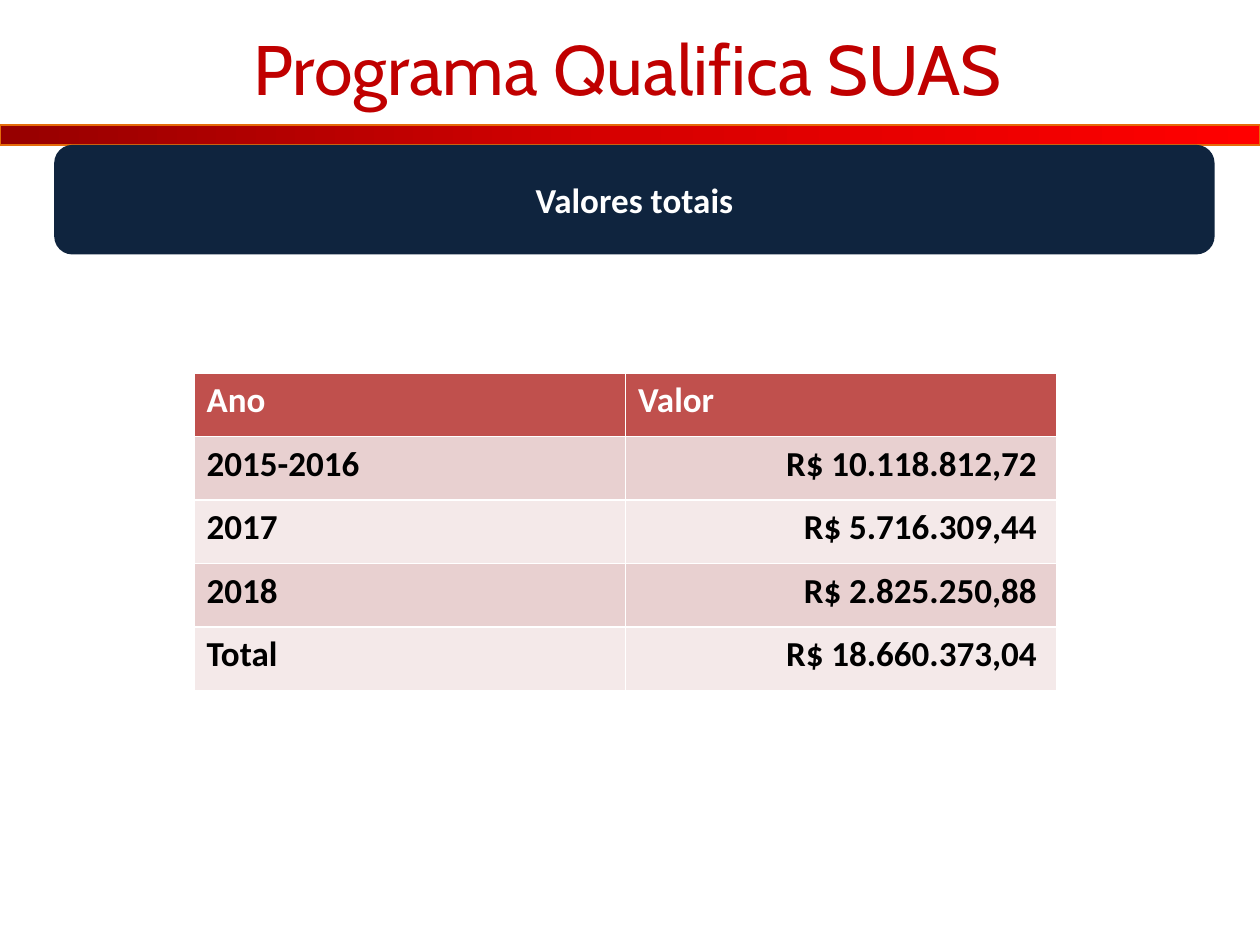
from copy import deepcopy

from pptx import Presentation
from pptx.dml.color import RGBColor
from pptx.enum.shapes import MSO_SHAPE
from pptx.enum.text import MSO_ANCHOR, MSO_AUTO_SIZE, PP_ALIGN
from pptx.oxml.ns import qn
from pptx.util import Inches, Pt

RECTANGLE, ROUNDED = MSO_SHAPE.RECTANGLE, MSO_SHAPE.ROUNDED_RECTANGLE
LEFT, CENTER, RIGHT = PP_ALIGN.LEFT, PP_ALIGN.CENTER, PP_ALIGN.RIGHT
MIDDLE, NO_AUTOFIT = MSO_ANCHOR.MIDDLE, MSO_AUTO_SIZE.NONE
TITLE_ONLY = 5
WIDTH, HEIGHT = 10, 7.5

YEARLY_VALUES = [
    ("Ano", "Valor"),
    ("2015-2016", "R$ 10.118.812,72"),
    ("2017", "R$ 5.716.309,44"),
    ("2018", "R$ 2.825.250,88"),
    ("Total", "R$ 18.660.373,04"),
]


def color(hex_code):
    return RGBColor.from_string(hex_code)


def write(frame, text, font="Calibri", size=20, ink="FFFFFF", bold=True, align=CENTER):
    paragraph = frame.paragraphs[0]
    paragraph.alignment = align
    run = paragraph.add_run()
    run.text = text
    run.font.name, run.font.size, run.font.bold = font, Pt(size), bold
    run.font.color.rgb = color(ink)


class ProgramSlide:
    """Builds a slide in the programme's style, with lengths as shares of its size."""

    red, navy, outline = "C00000", "0F243E", "E46C0A"
    gradient = [("970000", 0), ("D70000", 0.5), ("FF0000", 1)]
    header_fill, row_fills = "C0504D", ("E8D0D0", "F4E9E9")

    def __init__(self, deck):
        self.deck = deck
        self.slide = deck.slides.add_slide(deck.slide_layouts[TITLE_ONLY])

    def area(self, x, y, w, h):
        across, down = self.deck.slide_width, self.deck.slide_height
        return int(x * across), int(y * down), int(w * across), int(h * down)

    def block(self, kind, place):
        shape = self.slide.shapes.add_shape(kind, *self.area(*place))
        shape.shadow.inherit = False
        return shape

    def title(self, text, place):
        heading = self.slide.shapes.title
        heading.left, heading.top, heading.width, heading.height = self.area(*place)
        frame = heading.text_frame
        frame.auto_size, frame.vertical_anchor = NO_AUTOFIT, MIDDLE
        write(frame, text, font="Cabin", size=40, ink=self.red, bold=False)

    def stripe(self, place):
        stripe = self.block(RECTANGLE, place)
        stripe.line.color.rgb, stripe.line.width = color(self.outline), Pt(1)
        stripe.fill.gradient()
        stripe.fill.gradient_angle = 0
        stops = stripe.element.spPr.find(qn("a:gradFill")).find(qn("a:gsLst"))
        stops.append(deepcopy(stops[-1]))
        for stop, (shade, position) in zip(stripe.fill.gradient_stops, self.gradient):
            stop.color.rgb, stop.position = color(shade), position

    def banner(self, text, place):
        banner = self.block(ROUNDED, place)
        banner.fill.solid()
        banner.fill.fore_color.rgb = color(self.navy)
        banner.line.fill.background()
        banner.text_frame.vertical_anchor = MIDDLE
        write(banner.text_frame, text)

    def table(self, rows, place):
        table = self.slide.shapes.add_table(len(rows), len(rows[0]), *self.area(*place)).table
        for r, row in enumerate(rows):
            is_header = r == 0
            for c, text in enumerate(row):
                cell = table.cell(r, c)
                is_amount = c == 1 and not is_header
                cell.fill.solid()
                cell.fill.fore_color.rgb = color(self.header_fill if is_header else self.row_fills[(r - 1) % 2])
                if is_amount:
                    cell.margin_right = Inches(0.16)
                write(cell.text_frame, text, ink="FFFFFF" if is_header else "000000",
                      align=RIGHT if is_amount else LEFT)


def main():
    deck = Presentation()
    deck.slide_width, deck.slide_height = Inches(WIDTH), Inches(HEIGHT)
    page = ProgramSlide(deck)
    page.stripe((0, 0.99 / HEIGHT, 1, 0.16 / HEIGHT))
    page.title("Programa Qualifica SUAS", (0, -0.27 / HEIGHT, 9.96 / WIDTH, 1.61 / HEIGHT))
    page.banner("Valores totais", (0.43 / WIDTH, 1.15 / HEIGHT, 9.21 / WIDTH, 0.87 / HEIGHT))
    page.table(YEARLY_VALUES, (1.54 / WIDTH, 2.96 / HEIGHT, 6.85 / WIDTH, 2.52 / HEIGHT))
    deck.save("out.pptx")


if __name__ == "__main__":
    main()
